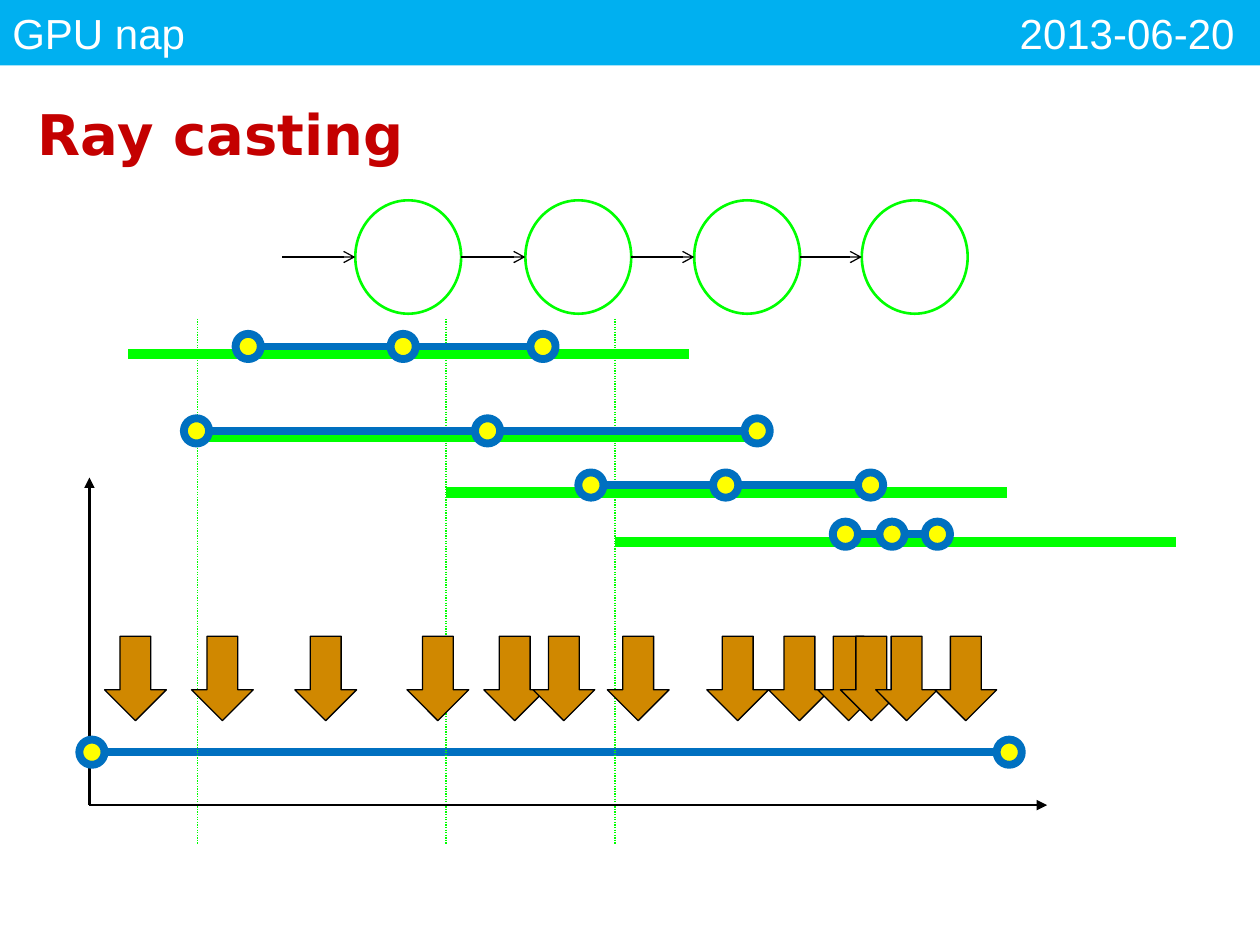
from lxml import etree
from pptx import Presentation
from pptx.dml.color import RGBColor
from pptx.enum.dml import MSO_LINE_DASH_STYLE as Dash
from pptx.enum.shapes import MSO_CONNECTOR as Connector, MSO_SHAPE as Shape
from pptx.enum.text import MSO_ANCHOR as Anchor, PP_ALIGN as Align
from pptx.oxml.ns import qn
from pptx.util import Inches, Pt

GREEN, BLUE, YELLOW, BLACK = "00FF00", "0070C0", "FFFF00", "000000"
BEAD = 0.2


def color(value):
    return RGBColor.from_string(value)


class SlideBuilder:
    """Holds the slide being built and draws its kinds of element in one style."""

    def __init__(self, slide):
        self.slide = slide

    def format_text(self, frame, font, size, fill, bold=False):
        frame.word_wrap = True
        frame.vertical_anchor = Anchor.MIDDLE
        for paragraph in frame.paragraphs:
            paragraph.alignment = Align.LEFT
            for run in paragraph.runs:
                run.font.name, run.font.size = font, Pt(size)
                run.font.bold = bold
                run.font.color.rgb = color(fill)

    def title(self, text, left, top, width, height):
        title = self.slide.shapes.title
        title.left, title.top = Inches(left), Inches(top)
        title.width, title.height = Inches(width), Inches(height)
        title.text_frame.text = text
        self.format_text(title.text_frame, "DejaVu Sans", 32, "C40000", True)

    def banner(self, left_text, right_text, height, tab):
        banner = self.shape(Shape.RECTANGLE, 0, 0, 10, height, "00B0F0")
        paragraph = banner.text_frame.paragraphs[0]
        paragraph.text = f"{left_text}\t{right_text}"
        self.format_text(banner.text_frame, "Arial", 24, "FFFFFF")
        properties = paragraph._p.get_or_add_pPr()
        tabs = etree.SubElement(properties, qn("a:tabLst"))
        etree.SubElement(tabs, qn("a:tab"), pos=str(Inches(tab)), algn="r")

    def shape(self, kind, left, top, width, height, fill=None, line=None,
              weight=0.75, parent=None):
        shape = (parent or self.slide).shapes.add_shape(
            kind, Inches(left), Inches(top), Inches(width), Inches(height))
        shape.shadow.inherit = False
        if fill:
            shape.fill.solid()
            shape.fill.fore_color.rgb = color(fill)
        else:
            shape.fill.background()
        if line:
            shape.line.color.rgb = color(line)
            shape.line.width = Pt(weight)
        else:
            shape.line.fill.background()
        return shape

    def line(self, start, end, stroke, weight, dash=None, arrow=None, parent=None):
        points = [Inches(value) for value in (*start, *end)]
        line = (parent or self.slide).shapes.add_connector(Connector.STRAIGHT, *points)
        line.line.color.rgb = color(stroke)
        line.line.width = Pt(weight)
        if dash:
            line.line.dash_style = dash
        if arrow:
            etree.SubElement(line.line._get_or_add_ln(), qn("a:tailEnd"), type=arrow)
        etree.SubElement(line._element.spPr, qn("a:effectLst"))

    def bead(self, left, middle, parent=None):
        self.shape(Shape.OVAL, left, middle - BEAD / 2, BEAD, BEAD,
                   YELLOW, BLUE, 4.5, parent)

    def chain(self, lefts, middle):
        group = self.slide.shapes.add_group_shape()
        for left in lefts:
            self.bead(left, middle, group)
        for left, following in zip(lefts, lefts[1:]):
            self.line((left + BEAD, middle), (following, middle), BLUE, 4.5, parent=group)


def main():
    presentation = Presentation()
    presentation.slide_width, presentation.slide_height = Inches(10), Inches(7.5)
    slide = presentation.slides.add_slide(presentation.slide_layouts[5])
    builder = SlideBuilder(slide)

    builder.banner("GPU nap", "2013-06-20", 0.52, 9.7)
    builder.title("Ray casting", 0.2, 0.52, 9.61, 1.08)

    ray_y, ray_start, ray_end = 5.97, 0.63, 7.91
    builder.line((ray_start + BEAD, ray_y), (ray_end, ray_y), BLUE, 4.5)

    for x in (1.57, 3.54, 4.88):
        builder.line((x, 2.53), (x, 6.7), GREEN, 0.75, dash=Dash.ROUND_DOT)
    for x, y in ((4.88, 4.3), (3.54, 3.91), (1.02, 2.81), (1.57, 3.47)):
        builder.line((x, y), (x + 4.45, y), GREEN, 6)

    node_width, arrow_start = 0.84, 2.24
    for left in (2.82, 4.17, 5.51, 6.84):
        builder.shape(Shape.OVAL, left, 1.59, node_width, 0.9, line=GREEN, weight=1.5)
        builder.line((arrow_start, 2.04), (left, 2.04), BLACK, 0.75, arrow="arrow")
        arrow_start = left + node_width

    builder.chain((1.87, 3.1, 4.21), 2.75)
    builder.chain((1.46, 3.77, 5.91), 3.42)
    builder.chain((4.59, 5.66, 6.81), 3.85)
    builder.chain((6.61, 6.98, 7.34), 4.24)

    for end in ((0.71, 3.79), (8.31, 6.39)):
        builder.line((0.71, 6.39), end, BLACK, 1.5, arrow="triangle")
    for left in (ray_start, ray_end):
        builder.bead(left, ray_y)

    for left in (0.83, 1.52, 2.34, 3.23, 3.84, 4.23, 4.82,
                 5.61, 6.1, 6.49, 6.67, 6.95, 7.42):
        builder.shape(Shape.DOWN_ARROW, left, 5.05, 0.49, 0.67, "D08800", BLACK)

    presentation.save("out.pptx")


if __name__ == "__main__":
    main()
